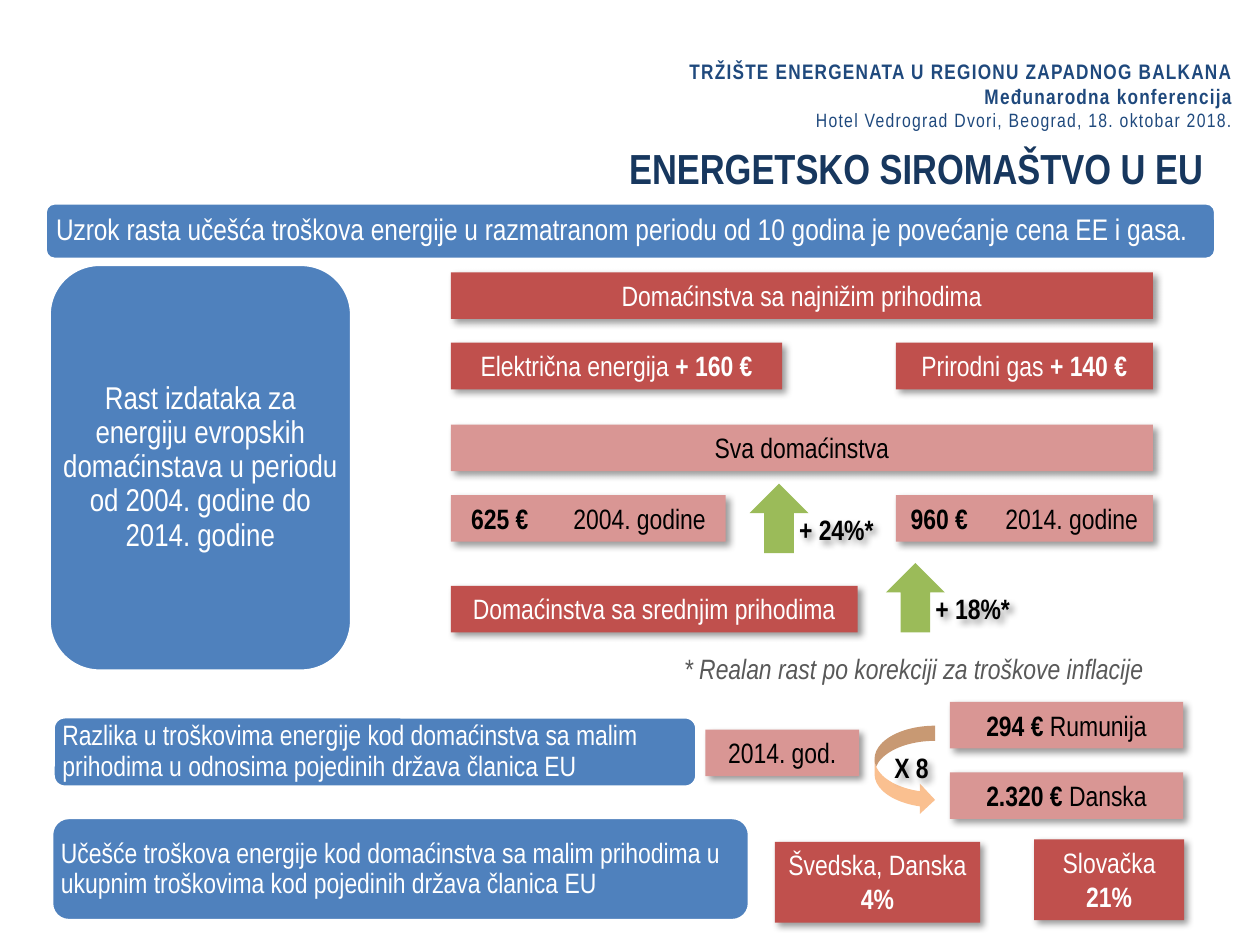
from lxml import etree
from pptx import Presentation
from pptx.dml.color import RGBColor
from pptx.enum.shapes import MSO_SHAPE
from pptx.enum.text import MSO_ANCHOR, PP_ALIGN
from pptx.oxml.ns import qn
from pptx.util import Cm, Pt

RECT, ROUND = MSO_SHAPE.RECTANGLE, MSO_SHAPE.ROUNDED_RECTANGLE
UP, CURVED = MSO_SHAPE.UP_ARROW, MSO_SHAPE.CURVED_RIGHT_ARROW
LEFT, CENTER, RIGHT, JUSTIFY = (PP_ALIGN.LEFT, PP_ALIGN.CENTER,
                                PP_ALIGN.RIGHT, PP_ALIGN.JUSTIFY)
TOP, MIDDLE = MSO_ANCHOR.TOP, MSO_ANCHOR.MIDDLE
FONT = "Arial Narrow"
BLUE, RED, PINK, GREEN, PEACH = "4F81BD", "C0504D", "D99694", "9BBB59", "FAC090"
WHITE, BLACK, GREY, NAVY, DARK_NAVY = "FFFFFF", "000000", "595959", "1F497D", "17375E"

HEADER = [
    ("TRŽIŠTE ENERGENATA U REGIONU ZAPADNOG BALKANA", 12, True),
    ("Međunarodna konferencija", 12, True),
    ("Hotel Vedrograd Dvori, Beograd, 18. oktobar 2018.", 11, False),
]
TITLE = "ENERGETSKO SIROMAŠTVO U EU"

# text, box (left, top, width, height in cm), vertical pad, inset, size, alignment
BANNERS = [
    ("Uzrok rasta učešća troškova energije u razmatranom periodu od 10 godina "
     "je povećanje cena EE i gasa.", (0.91, 4.09, 23.6, 1.14), 0.05, 0.18, 17, LEFT),
    ("Rast izdataka za energiju evropskih domaćinstava u periodu od 2004. godine "
     "do 2014. godine", (0.99, 5.33, 6.1, 8.2), 0.39, 0.15, 18, CENTER),
    ("Razlika u troškovima energije kod domaćinstva sa malim prihodima u odnosima "
     "pojedinih država članica EU", (1.07, 14.45, 12.98, 1.42), 0.06, 0.15, 16, LEFT),
    ("Učešće troškova energije kod domaćinstva sa malim prihodima u ukupnim "
     "troškovima kod pojedinih država članica EU",
     (1.04, 16.48, 14.07, 2.08), 0.1, 0.15, 16, LEFT),
]

ROW_H = 0.94
COL1, COL2, COL3 = 9.09, 18.06, 19.15
FULL_W, RIGHT_W, COUNTRY_W = 14.15, 5.18, 4.7
# runs as (text, bold), box, fill
BOXES = [
    ([("Domaćinstva sa najnižim prihodima", False)], (COL1, 5.49, FULL_W, ROW_H), RED),
    ([("Električna energija ", False), ("+ 160 €", True)], (COL1, 6.91, 6.68, ROW_H), RED),
    ([("Prirodni gas ", False), ("+ 140 €", True)], (COL2, 6.91, RIGHT_W, ROW_H), RED),
    ([("Sva domaćinstva", False)], (COL1, 8.56, FULL_W, ROW_H), PINK),
    ([("Domaćinstva sa srednjim prihodima", False)], (COL1, 11.81, 8.2, ROW_H), RED),
    ([("2014. god.", False)], (14.22, 14.71, 3.1, ROW_H), PINK),
    ([("294 € ", True), ("Rumunija", False)], (COL3, 14.15, COUNTRY_W, ROW_H), PINK),
    ([("2.320 €", True), (" Danska", False)], (COL3, 15.57, COUNTRY_W, ROW_H), PINK),
    ([("Švedska, Danska ", False), ("4%", True)], (15.62, 16.97, 4.14, 1.63), RED),
    ([("Slovačka ", False), ("21%", True)], (20.85, 16.92, 3.02, 1.63), RED),
]
# amount, year, box, left inset, tab stop
YEARS = [
    ("625 €", "2004. godine", (COL1, 9.98, 5.54, ROW_H), 0.41, 2.06),
    ("960 €", "2014. godine", (COL2, 9.98, RIGHT_W, ROW_H), 0.3, 1.91),
]
ARROWS = [
    (UP, (15.11, 9.75, 1.19, 1.4), GREEN),
    (UP, (17.86, 11.35, 1.19, 1.4), GREEN),
    (CURVED, (17.63, 14.63, 1.22, 1.8), PEACH),
]
ARROW_LABELS = [
    ("+ 24%*", (15.77, 10.21, 2.18, ROW_H)),
    ("+ 18%*", (18.52, 11.81, 2.18, ROW_H)),
    ("X 8", (17.7, 15.01, 1.35, ROW_H)),
]
FOOTNOTE = ("* Realan rast po korekciji za troškove inflacije", (13.54, 13, 9.98, ROW_H))


def rgb(value):
    return RGBColor.from_string(value)


def cm(box):
    return [Cm(v) for v in box]


def add_run(p, text, size, color, bold=False, italic=False):
    r = p.add_run()
    r.text = text
    f = r.font
    f.name, f.size, f.bold, f.italic = FONT, Pt(size), bold, italic
    f.color.rgb = rgb(color)
    return r


def frame(sp, align, anchor=TOP, inset=None):
    """Prepare the text frame and return its first paragraph."""
    tf = sp.text_frame
    tf.word_wrap = True
    tf.vertical_anchor = anchor
    if inset is not None:
        tf.margin_left = tf.margin_right = Cm(inset)
        tf.margin_top = tf.margin_bottom = Cm(inset)
    p = tf.paragraphs[0]
    p.alignment = align
    return p


def add_shadow(sp):
    sp.shadow.inherit = False
    effects = sp._element.spPr.find(qn("a:effectLst"))
    shadow = etree.SubElement(effects, qn("a:outerShdw"), blurRad="50800",
                              dist="38100", dir="2700000", algn="tl", rotWithShape="0")
    color = etree.SubElement(shadow, qn("a:srgbClr"), val=BLACK)
    etree.SubElement(color, qn("a:alpha"), val="40000")


def add_filled(shapes, kind, box, fill, line=None):
    sp = shapes.add_shape(kind, *cm(box))
    sp.fill.solid()
    sp.fill.fore_color.rgb = rgb(fill)
    if line:
        sp.line.color.rgb = rgb(line)
        sp.line.width = Pt(2)
    else:
        sp.line.fill.background()
    sp.shadow.inherit = False
    return sp


def add_banner(shapes, text, box, pad, inset, size, align):
    group = shapes.add_group_shape()
    add_filled(group.shapes, ROUND, box, BLUE, WHITE)
    x, y, w, h = box
    label = group.shapes.add_textbox(*cm((x + 0.04, y + pad, w - 0.08, h - 2 * pad)))
    p = frame(label, align, MIDDLE, inset)
    p.line_spacing = 0.9
    add_run(p, text, size, WHITE)


def add_box(shapes, runs, box, fill, align=CENTER):
    sp = add_filled(shapes, RECT, box, fill)
    add_shadow(sp)
    p = frame(sp, align)
    for text, bold in runs:
        add_run(p, text, 16, WHITE if fill == RED else BLACK, bold)
    return sp


def add_year(shapes, amount, year, box, inset, stop):
    sp = add_box(shapes, [(amount, True), ("\t" + year, False)], box, PINK, LEFT)
    sp.text_frame.margin_left = Cm(inset)
    sp.text_frame.margin_right = 0
    pPr = sp.text_frame.paragraphs[0]._p.get_or_add_pPr()
    tabs = etree.SubElement(pPr, qn("a:tabLst"))
    etree.SubElement(tabs, qn("a:tab"), pos=str(Cm(stop)), algn="l")


def main():
    prs = Presentation()
    prs.slide_width, prs.slide_height = Cm(25.4), Cm(19.05)
    s = prs.slides.add_slide(prs.slide_layouts[5])
    shapes = s.shapes

    header = shapes.add_textbox(*cm((12.09, 0.91, 13, 2.01)))
    p = frame(header, RIGHT, MIDDLE)
    for i, (text, size, bold) in enumerate(HEADER):
        if i:
            p = header.text_frame.add_paragraph()
            p.alignment = RIGHT
        r = add_run(p, text, size, NAVY, bold)
        r._r.get_or_add_rPr().set("spc", "70")

    title = shapes.title
    title.left, title.top, title.width, title.height = cm((0.91, 2.67, 23.6, 1.42))
    add_run(frame(title, RIGHT, MIDDLE), TITLE, 24, DARK_NAVY, True)

    for banner in BANNERS:
        add_banner(shapes, *banner)
    for box in BOXES:
        add_box(shapes, *box)
    for year in YEARS:
        add_year(shapes, *year)
    for arrow in ARROWS:
        add_filled(shapes, *arrow)
    for text, box in ARROW_LABELS:
        label = shapes.add_textbox(*cm(box))
        add_shadow(label)
        add_run(frame(label, CENTER), text, 16, BLACK, True)

    text, box = FOOTNOTE
    note = shapes.add_textbox(*cm(box))
    add_run(frame(note, JUSTIFY), text, 16, GREY, italic=True)

    prs.save("out.pptx")


if __name__ == "__main__":
    main()
